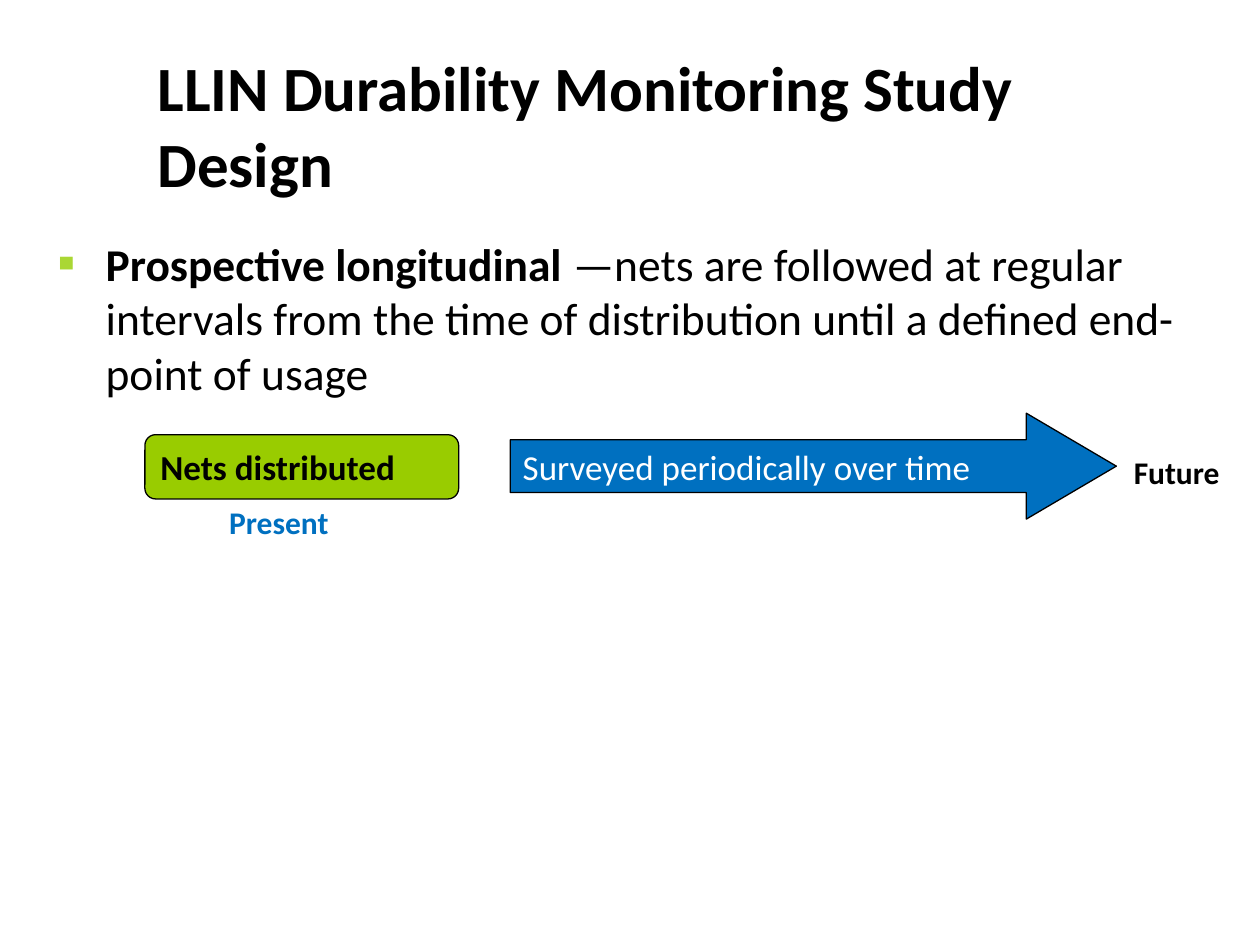
from dataclasses import dataclass

from lxml.etree import SubElement
from pptx import Presentation
from pptx.dml.color import RGBColor
from pptx.enum.shapes import MSO_SHAPE
from pptx.enum.text import MSO_ANCHOR, MSO_AUTO_SIZE, PP_ALIGN
from pptx.oxml.ns import qn
from pptx.util import Inches, Pt

COLUMNS, ROWS = 100, 75
TITLE_ONLY = 5


@dataclass(frozen=True)
class Theme:
    font: str = "Calibri"
    black: str = "000000"
    white: str = "FFFFFF"
    blue: str = "0070C0"
    green: str = "99CC00"
    bullet: str = "AAD734"
    title_size: int = 36
    body_size: int = 26
    shape_size: int = 20
    label_size: int = 18
    line_width: float = 0.75


class SlideBuilder:
    def __init__(self, presentation, theme):
        self.theme = theme
        self.column = presentation.slide_width / COLUMNS
        self.row = presentation.slide_height / ROWS
        self.slide = presentation.slides.add_slide(presentation.slide_layouts[TITLE_ONLY])

    def area(self, left, top, width, height):
        """Turn grid columns and rows into slide lengths."""
        return (round(left * self.column), round(top * self.row),
                round(width * self.column), round(height * self.row))

    def format_run(self, run, size, color, bold):
        run.font.name = self.theme.font
        run.font.size = Pt(size)
        run.font.bold = bold
        run.font.color.rgb = RGBColor.from_string(color)

    def set_text(self, shape, text, size, color, bold, anchor=MSO_ANCHOR.MIDDLE):
        frame = shape.text_frame
        frame.text = text
        frame.word_wrap = True
        frame.auto_size = MSO_AUTO_SIZE.NONE
        frame.vertical_anchor = anchor
        paragraph = frame.paragraphs[0]
        paragraph.alignment = PP_ALIGN.LEFT
        self.format_run(paragraph.runs[0], size, color, bold)
        return paragraph

    def title(self, text, area):
        shape = self.slide.shapes.title
        shape.left, shape.top, shape.width, shape.height = self.area(*area)
        self.set_text(shape, text, self.theme.title_size, self.theme.black, True)

    def text_box(self, text, area, size, color):
        box = self.slide.shapes.add_textbox(*self.area(*area))
        return self.set_text(box, text, size, color, True, MSO_ANCHOR.TOP)

    def label(self, text, area, color):
        self.text_box(text, area, self.theme.label_size, color)

    def bullet(self, term, explanation, area):
        theme = self.theme
        paragraph = self.text_box(term, area, theme.body_size, theme.black)
        indent = Inches(0.38)
        properties = paragraph._p.get_or_add_pPr()
        properties.set("marL", str(indent))
        properties.set("indent", str(-indent))
        color = SubElement(properties, qn("a:buClr"))
        SubElement(color, qn("a:srgbClr"), val=theme.bullet)
        SubElement(properties, qn("a:buSzPct"), val="110000")
        SubElement(properties, qn("a:buFont"), typeface=theme.font)
        SubElement(properties, qn("a:buChar"), char="▪")
        paragraph.space_after = Pt(6)
        run = paragraph.add_run()
        run.text = explanation
        self.format_run(run, theme.body_size, theme.black, False)

    def step(self, kind, text, area, fill, color, bold, adjustments=()):
        shape = self.slide.shapes.add_shape(kind, *self.area(*area))
        for index, value in enumerate(adjustments):
            shape.adjustments[index] = value
        shape.shadow.inherit = False
        shape.fill.solid()
        shape.fill.fore_color.rgb = RGBColor.from_string(fill)
        shape.line.color.rgb = RGBColor.from_string(self.theme.black)
        shape.line.width = Pt(self.theme.line_width)
        self.set_text(shape, text, self.theme.shape_size, color, bold)


def main():
    presentation = Presentation()
    presentation.slide_width, presentation.slide_height = Inches(10), Inches(7.5)
    theme = Theme()
    builder = SlideBuilder(presentation, theme)

    builder.title("LLIN Durability Monitoring Study Design", (11.5, 4.4, 74.4, 10.9))
    builder.bullet(
        "Prospective longitudinal ",
        "—nets are followed at regular intervals from the time of distribution "
        "until a defined end-point of usage",
        (3.6, 18.2, 93.5, 56.8))
    builder.step(MSO_SHAPE.ROUNDED_RECTANGLE, "Nets distributed",
                 (11.5, 34.5, 24.9, 5.1), theme.green, theme.black, True)
    builder.step(MSO_SHAPE.RIGHT_ARROW, "Surveyed periodically over time",
                 (40.5, 32.8, 48.1, 8.4), theme.blue, theme.white, False, (0.5, 0.85))
    builder.label("Present", (17.2, 39.4, 12, 4), theme.blue)
    builder.label("Future", (89, 35.5, 10.6, 4), theme.black)

    presentation.save("out.pptx")


if __name__ == "__main__":
    main()
